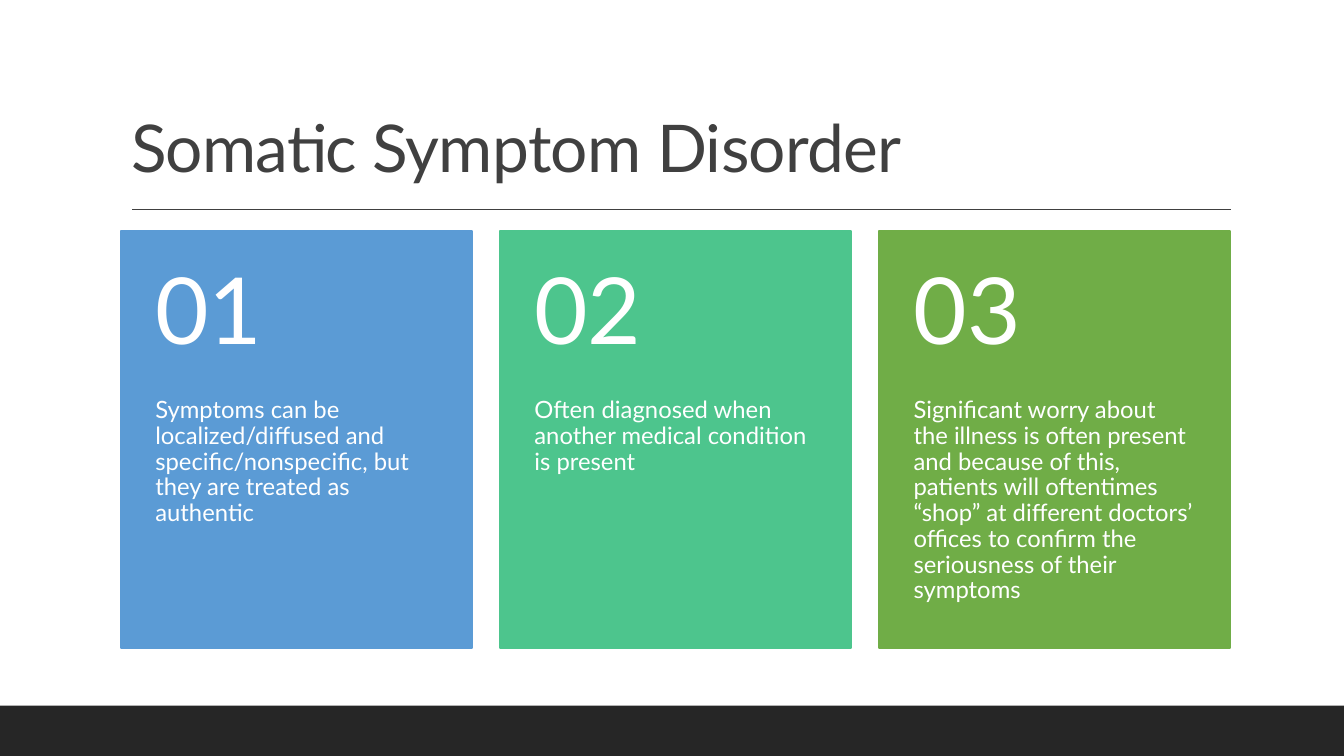
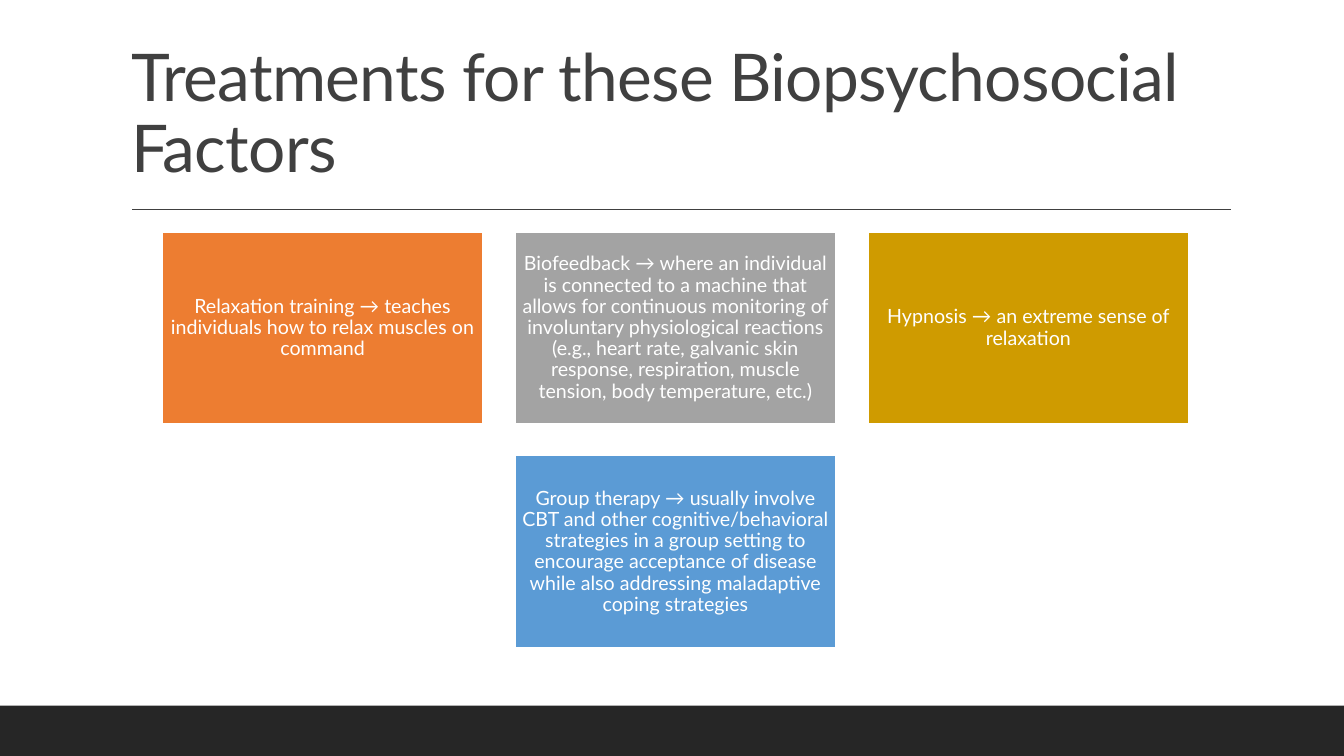
"""Build two slides on somatic symptom disorder and its treatments."""
from pptx import Presentation
from pptx.dml.color import RGBColor
from pptx.enum.shapes import MSO_CONNECTOR as LINE, MSO_SHAPE as SHAPE
from pptx.enum.text import MSO_ANCHOR as ANCHOR, MSO_AUTO_SIZE as FIT, PP_ALIGN as ALIGN
from pptx.oxml.ns import qn
from pptx.util import Inches, Pt

FONT = "Lato"
WHITE = RGBColor(0xFF, 0xFF, 0xFF)
INK = RGBColor(0x40, 0x40, 0x40)
BAND = RGBColor(0x26, 0x26, 0x26)
BLUE = RGBColor(0x5B, 0x9B, 0xD5)
MINT = RGBColor(0x4D, 0xC5, 0x8D)
GREEN = RGBColor(0x70, 0xAD, 0x47)
ORANGE = RGBColor(0xED, 0x7D, 0x31)
GRAY = RGBColor(0xA3, 0xA3, 0xA3)
GOLD = RGBColor(0xCF, 0x9B, 0x00)


def block(slide, left, top, width, height, fill, edge):
    rect = slide.shapes.add_shape(
        SHAPE.RECTANGLE, Inches(left), Inches(top), Inches(width), Inches(height))
    rect.shadow.inherit = False
    rect.fill.solid()
    rect.fill.fore_color.rgb = fill
    rect.line.color.rgb = edge
    rect.line.width = Pt(1.25)
    return rect


def write(shape, text, size, color, anchor, align, pads):
    frame = shape.text_frame
    frame.word_wrap = True
    frame.auto_size = FIT.NONE
    frame.vertical_anchor = anchor
    frame.margin_left, frame.margin_top, frame.margin_right, frame.margin_bottom = map(Inches, pads)
    para = frame.paragraphs[0]
    para.alignment = align
    para.line_spacing = 0.9
    run = para.add_run()
    run.text = text
    run.font.name = FONT
    run.font.size = Pt(size)
    run.font.color.rgb = color
    return run


deck = Presentation()
deck.slide_width = Inches(13.33)
deck.slide_height = Inches(7.5)

slides = []
for name in ("Somatic Symptom Disorder", "Treatments for these Biopsychosocial Factors"):
    slide = deck.slides.add_slide(deck.slide_layouts[5])
    title = slide.shapes.title
    title.left, title.top, title.width, title.height = map(Inches, (1.2, 0.31, 11, 1.59))
    run = write(title, name, 47, INK, ANCHOR.BOTTOM, ALIGN.LEFT, (0.1, 0.05, 0.1, 0.05))
    run.font._element.set("spc", "-50")
    rule = slide.shapes.add_connector(
        LINE.STRAIGHT, Inches(1.31), Inches(2.08), Inches(12.21), Inches(2.08))
    rule.line.color.rgb = INK
    rule.line.width = Pt(1)
    props = rule._element.spPr
    props.append(props.makeelement(qn("a:effectLst"), {}))
    band = block(slide, 0, 7, 13.33, 0.5, BAND, BAND)
    band.line.fill.background()
    slides.append(slide)

signs, cures = slides

cards = [
    (BLUE, "Symptoms can be localized/diffused and specific/nonspecific, but they are treated as authentic"),
    (MINT, "Often diagnosed when another medical condition is present"),
    (GREEN, "Significant worry about the illness is often present and because of this, patients will "
            "oftentimes “shop” at different doctors’ offices to confirm the seriousness of their symptoms"),
]
for i, (color, text) in enumerate(cards):
    left = 1.2 + 3.76 * i
    block(signs, left, 2.29, 3.48, 4.14, color, color)
    body = signs.shapes.add_textbox(Inches(left), Inches(3.95), Inches(3.48), Inches(2.48))
    write(body, text, 17, WHITE, ANCHOR.TOP, ALIGN.LEFT, (0.34, 0, 0.34, 0.36))
    head = signs.shapes.add_textbox(Inches(left), Inches(2.29), Inches(3.48), Inches(1.66))
    write(head, f"{i + 1:02}", 66, WHITE, ANCHOR.MIDDLE, ALIGN.LEFT, (0.34, 0.18, 0.34, 0.18))

tiles = [
    (0, 0, ORANGE, "Relaxation training → teaches individuals how to relax muscles on command"),
    (1, 0, GRAY, "Biofeedback → where an individual is connected to a machine that allows for continuous "
                 "monitoring of involuntary physiological reactions (e.g., heart rate, galvanic skin "
                 "response, respiration, muscle tension, body temperature, etc.)"),
    (2, 0, GOLD, "Hypnosis → an extreme sense of relaxation"),
    (1, 1, BLUE, "Group therapy → usually involve CBT and other cognitive/behavioral strategies in a group "
                 "setting to encourage acceptance of disease while also addressing maladaptive coping "
                 "strategies"),
]
for col, row, color, text in tiles:
    tile = block(cures, 1.61 + 3.5 * col, 2.3 + 2.22 * row, 3.18, 1.91, color, WHITE)
    write(tile, text, 14, WHITE, ANCHOR.MIDDLE, ALIGN.CENTER, (0.06,) * 4)

deck.save("out.pptx")
